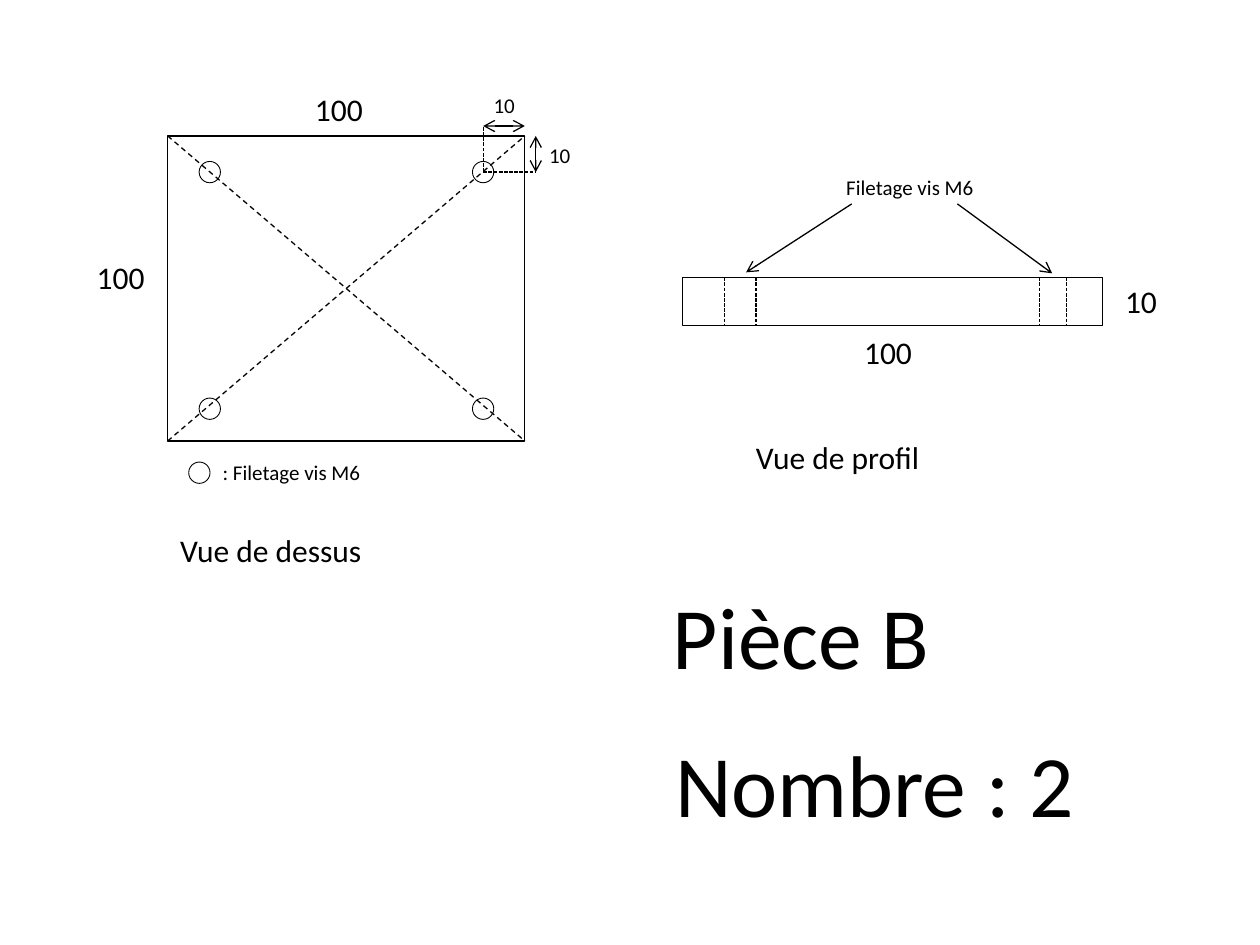
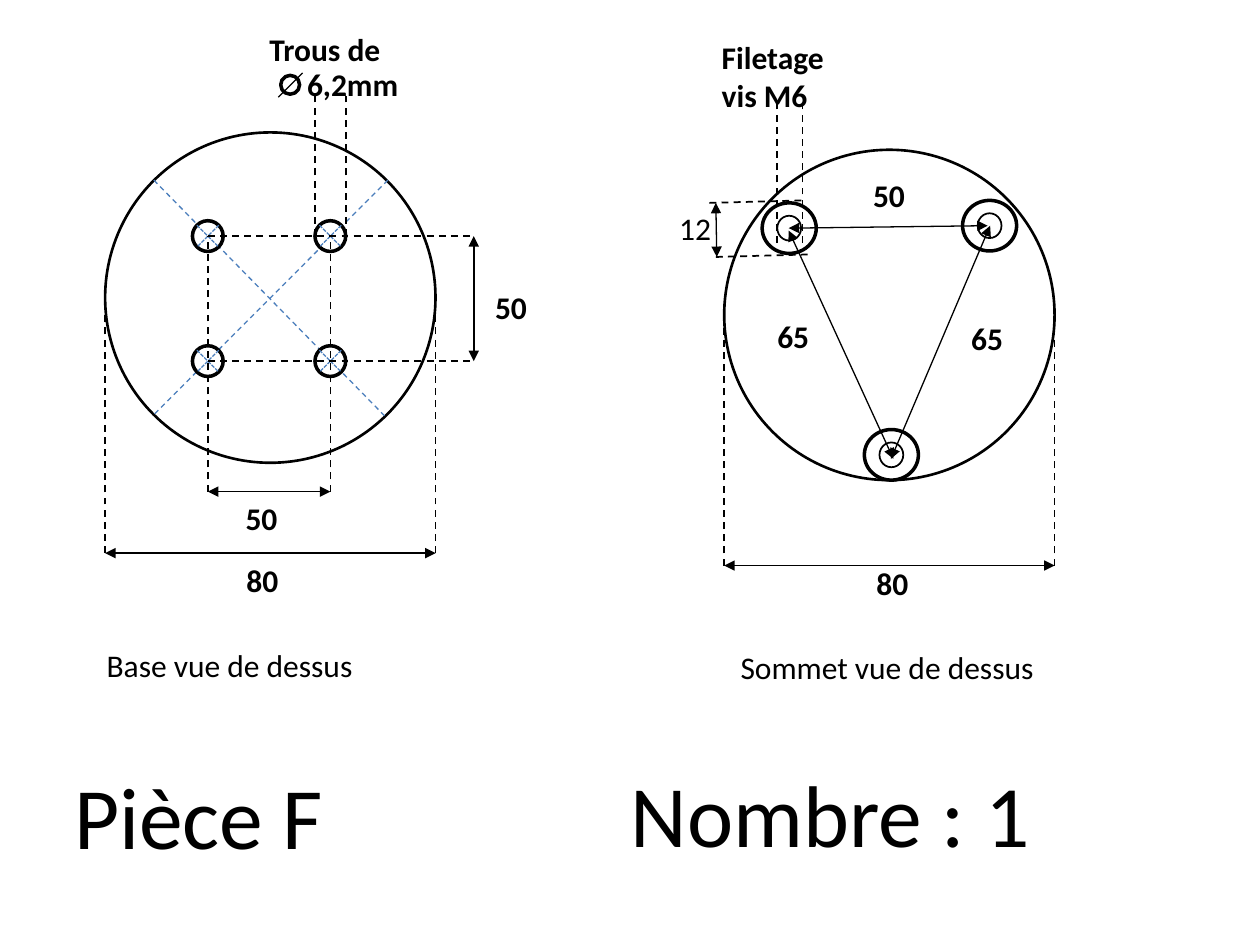
from dataclasses import dataclass
from itertools import product
from typing import NamedTuple, Optional

from lxml.etree import SubElement
from pptx import Presentation
from pptx.dml.color import RGBColor
from pptx.enum.dml import MSO_LINE as Dash
from pptx.enum.shapes import MSO_CONNECTOR, MSO_SHAPE as Preset
from pptx.enum.text import MSO_ANCHOR as Anchor, MSO_AUTO_SIZE as AutoSize, PP_ALIGN as Align
from pptx.oxml.ns import qn
from pptx.util import Cm, Pt

TITLE_ONLY = 5


@dataclass(frozen=True)
class Theme:
    font: str = "Calibri"
    ink: RGBColor = RGBColor(0, 0, 0)
    paper: RGBColor = RGBColor(255, 255, 255)
    axis: RGBColor = RGBColor(0x4B, 0x7E, 0xBC)
    small: int = 12
    body: int = 18
    heading: int = 50


THEME = Theme()


class Point(NamedTuple):
    x: float
    y: float


class Stroke(NamedTuple):
    width: float = 0.75
    dash: Optional[Dash] = None
    head: str = ""
    tail: str = ""
    color: RGBColor = THEME.ink


class Label(NamedTuple):
    text: str
    left: float
    top: float
    width: float
    size: int = THEME.body
    bold: bool = False
    wrap: bool = True
    lines: int = 1


class Line(NamedTuple):
    start: Point
    end: Point
    stroke: Stroke


THIN = Stroke()
HOLE_EDGE = Stroke(0.5)
DIAGONAL = Stroke(dash=Dash.DASH)
HIDDEN = Stroke(dash=Dash.SQUARE_DOT)
LEADER = Stroke(tail="arrow")
OPEN_DIMENSION = Stroke(head="arrow", tail="arrow")
FINE_DIMENSION = Stroke(head="triangle", tail="triangle")
DIMENSION = Stroke(1, head="triangle", tail="triangle")
EXTENSION = Stroke(1, Dash.DASH)
AXIS = Stroke(dash=Dash.DASH, color=THEME.axis)
CENTRE_MARK = Stroke(dash=Dash.SQUARE_DOT, color=THEME.axis)
DISC_EDGE = Stroke(1.5)
BORE_EDGE = Stroke(2)
THREAD_EDGE = Stroke(1)


def set_all(target, values: dict) -> None:
    for attribute, value in values.items():
        setattr(target, attribute, value)


def apply_stroke(line, stroke: Stroke) -> None:
    line.color.rgb = stroke.color
    line.width = Pt(stroke.width)
    if stroke.dash:
        line.dash_style = stroke.dash


def draw_line(slide, line: Line) -> None:
    connector = slide.shapes.add_connector(
        MSO_CONNECTOR.STRAIGHT, *(Cm(v) for v in (*line.start, *line.end)))
    apply_stroke(connector.line, line.stroke)
    properties = connector._element.spPr
    outline = properties.find(qn("a:ln"))
    for tag, kind in (("a:headEnd", line.stroke.head), ("a:tailEnd", line.stroke.tail)):
        if kind:
            SubElement(outline, qn(tag), type=kind)
    SubElement(properties, qn("a:effectLst"))


def draw_lines(slide, stroke: Stroke, *spans: tuple) -> None:
    """Draw one line per (x1, y1, x2, y2) span, all in the same stroke."""
    for x1, y1, x2, y2 in spans:
        draw_line(slide, Line(Point(x1, y1), Point(x2, y2), stroke))


def draw_outline(slide, preset: Preset, center: Point, width: float, height: float,
                 stroke: Stroke, filled: bool = False) -> None:
    shape = slide.shapes.add_shape(
        preset, Cm(center.x - width / 2), Cm(center.y - height / 2), Cm(width), Cm(height))
    shape.shadow.inherit = False
    if filled:
        shape.fill.solid()
        shape.fill.fore_color.rgb = THEME.paper
    else:
        shape.fill.background()
    apply_stroke(shape.line, stroke)


def draw_circle(slide, center: Point, diameter: float, stroke: Stroke,
                filled: bool = False) -> None:
    draw_outline(slide, Preset.OVAL, center, diameter, diameter, stroke, filled)


def write_label(holder, label: Label) -> None:
    """Place and format a text box or a title placeholder."""
    height = label.lines * label.size * 1.2 * 2.54 / 72 + 0.25
    set_all(holder, {"left": Cm(label.left), "top": Cm(label.top),
                     "width": Cm(label.width), "height": Cm(height)})
    frame = holder.text_frame
    frame.text = label.text
    set_all(frame, {"word_wrap": label.wrap, "vertical_anchor": Anchor.TOP,
                    "auto_size": AutoSize.SHAPE_TO_FIT_TEXT})
    paragraph = frame.paragraphs[0]
    paragraph.alignment = Align.LEFT
    font = paragraph.runs[0].font
    set_all(font, {"name": THEME.font, "size": Pt(label.size), "bold": label.bold})
    font.color.rgb = THEME.ink


def write_labels(slide, *labels: Label) -> None:
    for label in labels:
        write_label(slide.shapes.add_textbox(0, 0, 0, 0), label)


def bold_label(text: str, left: float, top: float, width: float = 1.17) -> Label:
    return Label(text, left, top, width, bold=True, wrap=False)


def add_part_slide(deck, title: Label, count: Label):
    slide = deck.slides.add_slide(deck.slide_layouts[TITLE_ONLY])
    write_label(slide.shapes.title, title)
    write_labels(slide, count)
    return slide


def draw_plate_top(slide) -> None:
    left, top, right, bottom = 3.38, 2.74, 10.58, 8.89
    hole_xs, hole_ys, hole = (4.23, 9.74), (3.47, 8.24), 0.43
    middle = Point((left + right) / 2, (top + bottom) / 2)
    draw_outline(slide, Preset.RECTANGLE, middle, right - left, bottom - top, THIN)
    draw_lines(slide, DIAGONAL, (left, top, right, bottom), (left, bottom, right, top))
    for x, y in (*product(hole_xs, hole_ys), (4.02, 9.53)):
        draw_circle(slide, Point(x, y), hole, HOLE_EDGE)

    hole_x, hole_y = hole_xs[1], hole_ys[0]
    offset_x, offset_y = 10.8, 2.54
    draw_lines(slide, HIDDEN, (hole_x, hole_y, hole_x, offset_y),
               (hole_x, hole_y, offset_x, hole_y))
    draw_lines(slide, OPEN_DIMENSION, (offset_x, top, offset_x, hole_y),
               (hole_x, offset_y, right, offset_y))
    write_labels(
        slide,
        Label("100", 6.1, 1.7, 1.8),
        Label("100", 1.7, 5.08, 2.74),
        Label("10", 9.7, 1.75, 1.09, THEME.small),
        Label("10", 10.82, 2.74, 1.09, THEME.small),
        Label(": Filetage vis M6", 4.24, 9.14, 6.78, THEME.small),
        Label("Vue de dessus", 3.38, 10.59, 7.42),
    )


def draw_plate_profile(slide) -> None:
    left, top, width, thickness = 13.76, 5.59, 8.46, 0.97
    middle = Point(left + width / 2, top + thickness / 2)
    draw_outline(slide, Preset.RECTANGLE, middle, width, thickness, THIN)
    draw_lines(slide, HIDDEN,
               *((x, top, x, top + thickness) for x in (14.6, 15.24, 20.96, 21.5)))
    draw_lines(slide, LEADER, (17.17, 4.11, 15.04, 5.49), (19.3, 4.11, 21.21, 5.51))
    write_labels(
        slide,
        Label("100", 17.17, 6.58, 1.8),
        Label("10", 22.43, 5.56, 1.8),
        Label("Filetage vis M6", 16.81, 3.4, 4.65, THEME.small),
        Label("Vue de profil", 14.99, 8.71, 7.42),
    )


def draw_disc(slide, center: Point, dimension_y: float) -> None:
    """Draw a disc with its overall diameter dimensioned below."""
    diameter = 6.66
    left, right = center.x - diameter / 2, center.x + diameter / 2
    draw_circle(slide, center, diameter, DISC_EDGE, filled=True)
    draw_lines(slide, EXTENSION, *((x, dimension_y, x, center.y) for x in (left, right)))
    draw_lines(slide, DIMENSION, (left, dimension_y, right, dimension_y))


def draw_base(slide) -> None:
    draw_disc(slide, Point(5.45, 6), 11.15)
    draw_lines(slide, AXIS, (3.1, 3.63, 7.75, 8.38), (7.82, 3.63, 3.1, 8.36))
    xs, ys, hole, arm = (4.19, 6.66), (4.76, 7.28), 0.62, 0.22
    for x, y in product(xs, ys):
        draw_circle(slide, Point(x, y), hole, BORE_EDGE, filled=True)
        draw_lines(slide, CENTRE_MARK, (x + arm, y - arm, x - arm, y + arm),
                   (x - arm, y - arm, x + arm, y + arm))

    pitch_x, pitch_y = 9.55, 9.91
    draw_lines(slide, EXTENSION,
               *((xs[0], y, pitch_x, y) for y in ys),
               *((x, pitch_y, x, ys[0]) for x in xs),
               *((xs[1] + side, ys[0], xs[1] + side, 1.93) for side in (hole / 2, -hole / 2)))
    draw_lines(slide, DIMENSION, (pitch_x, ys[0], pitch_x, ys[1]),
               (xs[0], pitch_y, xs[1], pitch_y))

    draw_circle(slide, Point(5.85, 1.71), 0.38, BORE_EDGE, filled=True)
    draw_lines(slide, THIN, (5.61, 1.96, 6.1, 1.47))
    write_labels(
        slide,
        bold_label("Trous de", 5.18, 0.48, 2.77),
        bold_label("6,2mm", 5.94, 1.19, 2.36),
        bold_label("50", 9.73, 5.69),
        bold_label("50", 4.7, 9.93),
        bold_label("80", 4.72, 11.18),
        Label("Base vue de dessus", 1.9, 12.9, 6.88),
    )


def draw_summit(slide) -> None:
    draw_disc(slide, Point(17.93, 6.35), 11.4)
    for boss in (Point(15.91, 4.6), Point(19.95, 4.55), Point(17.97, 9.17)):
        draw_outline(slide, Preset.OVAL, boss, 1.09, 1.02, BORE_EDGE, filled=True)
        draw_outline(slide, Preset.OVAL, boss, 0.48, 0.5, THREAD_EDGE)
    draw_lines(slide, EXTENSION,
               *((x, 4.9, x, 2.08) for x in (15.67, 16.18)),
               (14.3, 4.09, 16.18, 4.04), (14.43, 5.18, 16.28, 5.13))
    draw_lines(slide, FINE_DIMENSION,
               (14.43, 4.09, 14.45, 5.18), (15.9, 4.65, 18.01, 9.25),
               (19.96, 4.55, 17.96, 9.25), (15.9, 4.6, 19.91, 4.55))
    write_labels(
        slide,
        Label("Filetage vis M6", 14.3, 0.64, 3, bold=True, lines=2),
        Label("12", 13.44, 4.09, 1.3),
        bold_label("50", 17.35, 3.43),
        bold_label("65", 19.33, 6.3),
        bold_label("65", 15.42, 6.27),
        bold_label("80", 17.42, 11.25),
        Label("Sommet vue de dessus", 14.68, 12.93, 6.88),
    )


def main() -> None:
    deck = Presentation()
    set_all(deck, {"slide_width": Cm(25.4), "slide_height": Cm(19.05)})

    plate = add_part_slide(deck, Label("Pièce B", 13.31, 11.61, 11.3, THEME.heading),
                           Label("Nombre : 2", 13.36, 14.6, 11.3, THEME.heading))
    draw_plate_top(plate)
    draw_plate_profile(plate)

    disc = add_part_slide(deck, Label("Pièce F", 1.24, 15.24, 7.85, THEME.heading),
                          Label("Nombre : 1", 12.47, 15.19, 11.3, THEME.heading))
    draw_base(disc)
    draw_summit(disc)

    deck.save("out.pptx")


if __name__ == "__main__":
    main()
